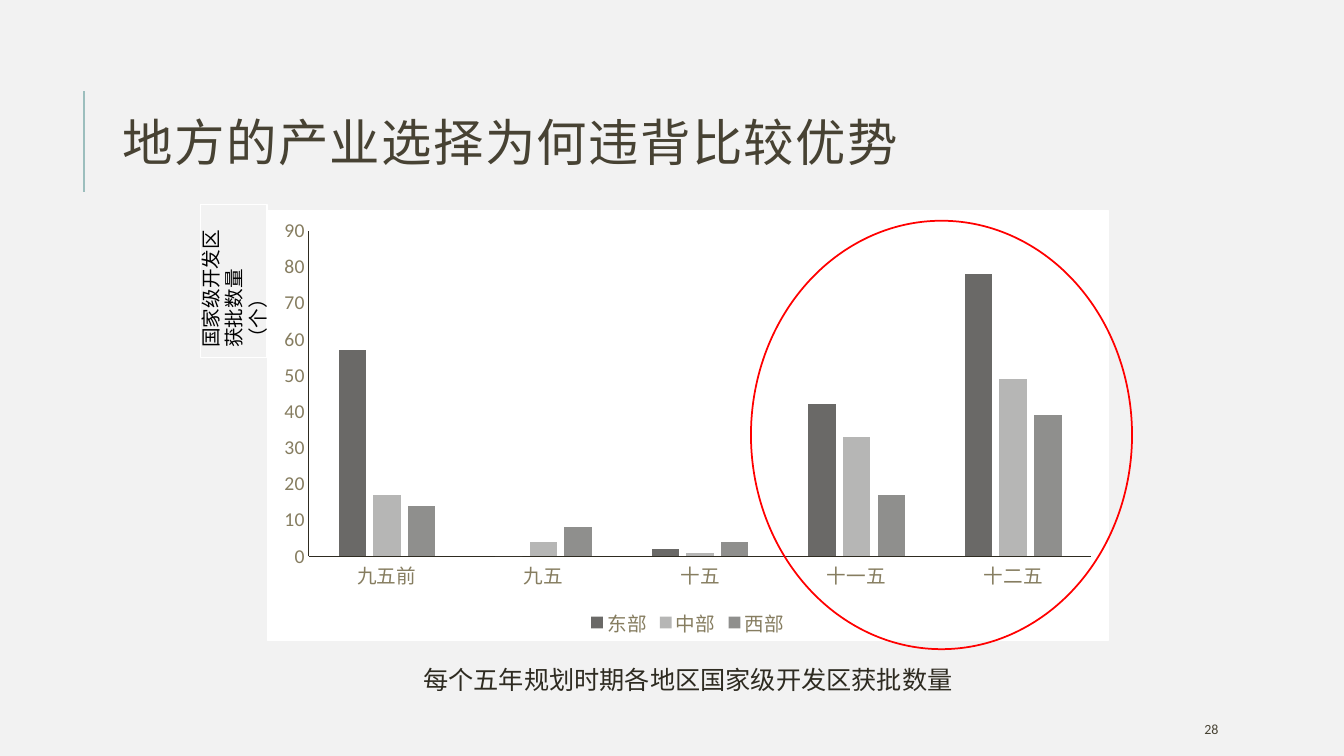
"""Build a slide charting national development zone approvals by region and plan period."""
from lxml import etree
from pptx import Presentation
from pptx.chart.data import CategoryChartData
from pptx.dml.color import RGBColor
from pptx.enum.chart import XL_CHART_TYPE as ChartType, XL_LEGEND_POSITION as LegendSpot, XL_TICK_MARK as Tick
from pptx.enum.shapes import MSO_CONNECTOR as Connector, MSO_SHAPE as Shape
from pptx.enum.text import MSO_ANCHOR as Anchor, PP_ALIGN as Align
from pptx.oxml import parse_xml
from pptx.oxml.ns import nsdecls, qn
from pptx.util import Pt

BACKGROUND = RGBColor(0xF2, 0xF2, 0xF2)
WHITE = RGBColor(0xFF, 0xFF, 0xFF)
BLACK = RGBColor(0x00, 0x00, 0x00)
RED = RGBColor(0xFF, 0x00, 0x00)
TEAL = RGBColor(0x9C, 0xBE, 0xBD)
BROWN = RGBColor(0x47, 0x42, 0x33)
DARK = RGBColor(0x2E, 0x2B, 0x21)
KHAKI = RGBColor(0x86, 0x7D, 0x60)

TITLE = "地方的产业选择为何违背比较优势"
CAPTION = "每个五年规划时期各地区国家级开发区获批数量"
PAGE_NUMBER = "28"
AXIS_LABEL = [("国家级", "Noto Sans CJK SC"), ("开发区", "Arial"), ("获批数量（个）", "Noto Sans CJK SC")]
PERIODS = ["九五前", "九五", "十五", "十一五", "十二五"]
REGIONS = [
    ("东部", (57, 0, 2, 42, 78), RGBColor(0x6A, 0x69, 0x67)),
    ("中部", (17, 4, 1, 33, 49), RGBColor(0xB6, 0xB6, 0xB5)),
    ("西部", (14, 8, 4, 17, 39), RGBColor(0x8F, 0x8F, 0x8D)),
]

RULE = (60, 136.8, 60, 64.8)
TITLE_AREA = (80.6, 46.1, 822.2, 118.1)
NUMBER_AREA = (853.2, 509.8, 76.3, 21.6)
CHART_AREA = (190.8, 149.8, 601.2, 308.2)
LABEL_AREA = (143.3, 146.2, 47.5, 109.4)
CAPTION_AREA = (143.3, 470.9, 696.2, 28.8)
HIGHLIGHT_AREA = (536.4, 157.7, 272.2, 306)


def points(values):
    return [Pt(value) for value in values]


def style_font(font, size, color, name="Calibri"):
    font.size, font.name = Pt(size), name
    font.color.rgb = color


def add_text(page, area, text, size, color, name="Calibri", anchor=Anchor.MIDDLE):
    box = page.shapes.add_textbox(*points(area))
    box.text_frame.word_wrap = True
    box.text_frame.vertical_anchor = anchor
    para = box.text_frame.paragraphs[0]
    para.add_run().text = text
    style_font(para.font, size, color, name)
    return para


def add_outline(page, kind, area, color, width):
    shape = page.shapes.add_shape(kind, *points(area))
    shape.shadow.inherit = False
    shape.fill.background()
    shape.line.color.rgb, shape.line.width = color, Pt(width)
    return shape


def add_rule(page):
    rule = page.shapes.add_connector(Connector.STRAIGHT, *points(RULE))
    rule.line.color.rgb, rule.line.width = TEAL, Pt(1.5)
    etree.SubElement(rule._element.spPr, qn("a:effectLst"))


def add_approvals_chart(page):
    data = CategoryChartData()
    data.categories = PERIODS
    for name, values, color in REGIONS:
        data.add_series(name, values)
    chart = page.shapes.add_chart(ChartType.COLUMN_CLUSTERED, *points(CHART_AREA), data).chart
    style_font(chart.font, 10, DARK)
    chart.has_title = False
    chart.has_legend = True
    chart.legend.position = LegendSpot.BOTTOM
    chart.legend.include_in_layout = False
    style_font(chart.legend.font, 14, KHAKI)
    for axis in (chart.category_axis, chart.value_axis):
        axis.has_major_gridlines = False
        axis.major_tick_mark = axis.minor_tick_mark = Tick.NONE
        axis.format.line.color.rgb, axis.format.line.width = DARK, Pt(0.75)
        style_font(axis.tick_labels.font, 14, KHAKI)
    chart.value_axis.minimum_scale, chart.value_axis.maximum_scale = 0, 90
    chart.value_axis.major_unit = 10
    plot = chart.plots[0]
    plot.gap_width, plot.overlap, plot.vary_by_categories = 219, -27, False
    for series, (name, values, color) in zip(plot.series, REGIONS):
        series.format.fill.solid()
        series.format.fill.fore_color.rgb = color
    white = f'<a:solidFill><a:srgbClr val="{WHITE}"/></a:solidFill>'
    frame = parse_xml(f'<c:spPr {nsdecls("c", "a")}>{white}<a:ln w="{Pt(0.75)}">{white}</a:ln></c:spPr>')
    chart._chartSpace.find(qn("c:chart")).addnext(frame)


def add_axis_label(page):
    box = add_outline(page, Shape.RECTANGLE, LABEL_AREA, WHITE, 1)
    frame = box.text_frame
    frame.word_wrap = True
    frame.vertical_anchor = Anchor.MIDDLE
    frame._txBody.bodyPr.set("vert", "vert270")
    para = frame.paragraphs[0]
    para.alignment = Align.LEFT
    for text, name in AXIS_LABEL:
        span = para.add_run()
        span.text = text
        style_font(span.font, 14, BLACK, name)


def main():
    deck = Presentation()
    deck.slide_width, deck.slide_height = points((960, 540))
    page = deck.slides.add_slide(deck.slide_layouts[6])
    page.background.fill.solid()
    page.background.fill.fore_color.rgb = BACKGROUND
    add_rule(page)
    title = add_text(page, TITLE_AREA, TITLE, 36, BROWN)
    title.line_spacing = 0.8
    title.runs[0]._r.get_or_add_rPr().set("spc", "100")
    add_text(page, NUMBER_AREA, PAGE_NUMBER, 10, BROWN)
    add_approvals_chart(page)
    add_axis_label(page)
    caption = add_text(page, CAPTION_AREA, CAPTION, 18, DARK, "Arial", Anchor.TOP)
    caption.alignment = Align.CENTER
    add_outline(page, Shape.OVAL, HIGHLIGHT_AREA, RED, 1.25)
    deck.save("out.pptx")


if __name__ == "__main__":
    main()
